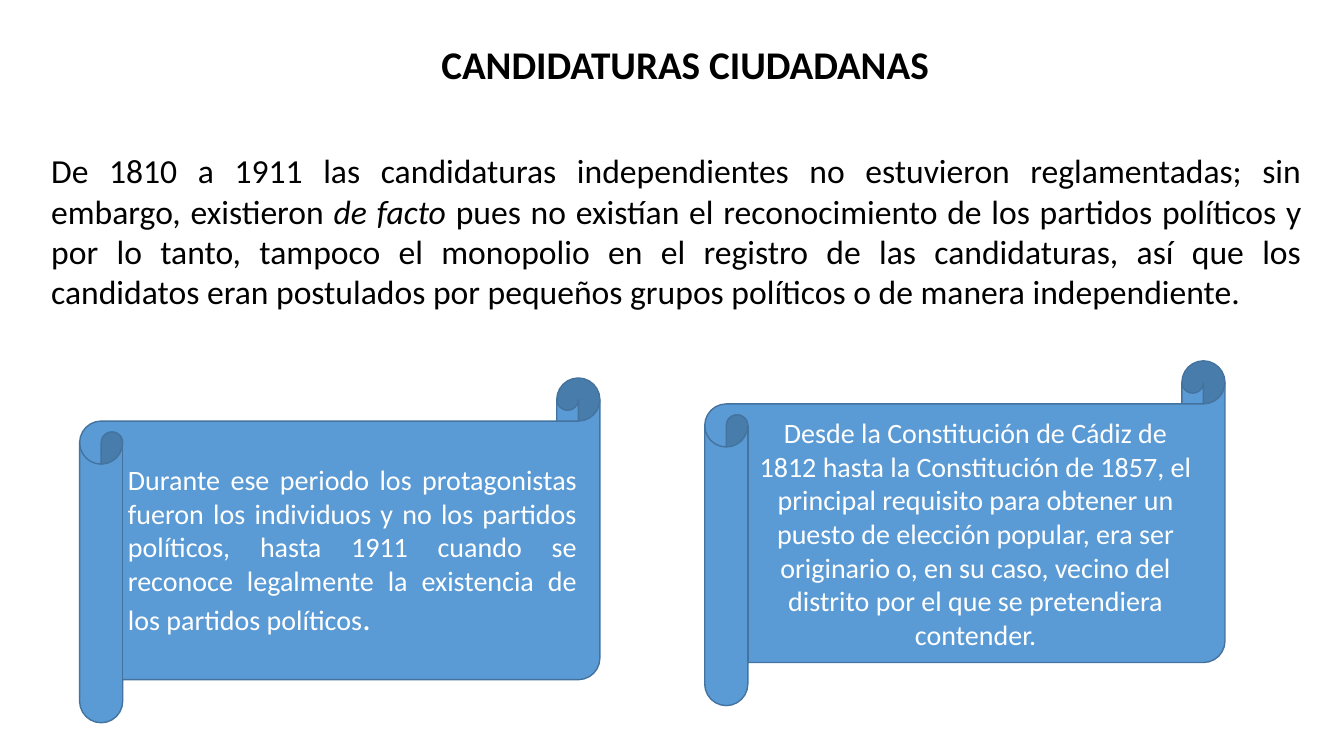
import dataclasses

import pptx
import pptx.dml.color
import pptx.enum.shapes
import pptx.enum.text
import pptx.util

PX = 9144  # 100 px to the inch
FONT = "Calibri"
BLACK = pptx.dml.color.RGBColor(0x00, 0x00, 0x00)
WHITE = pptx.dml.color.RGBColor(0xFF, 0xFF, 0xFF)
SCROLL_FILL = pptx.dml.color.RGBColor(0x5B, 0x9B, 0xD5)
SCROLL_LINE = pptx.dml.color.RGBColor(0x43, 0x73, 0x9E)
ALIGN = pptx.enum.text.PP_ALIGN
ANCHOR = pptx.enum.text.MSO_ANCHOR


@dataclasses.dataclass(frozen=True)
class Box:
    left: int
    top: int
    width: int
    height: int

    def emu(self) -> tuple[int, int, int, int]:
        return self.left * PX, self.top * PX, self.width * PX, self.height * PX


@dataclasses.dataclass(frozen=True)
class Span:
    text: str
    size: int
    bold: bool = False
    italic: bool = False


def write(shape, spans: list[Span], *, color: pptx.dml.color.RGBColor,
          align=ALIGN.CENTER, anchor=ANCHOR.TOP) -> None:
    frame = shape.text_frame
    frame.word_wrap = True
    frame.auto_size = pptx.enum.text.MSO_AUTO_SIZE.NONE
    frame.vertical_anchor = anchor
    para = frame.paragraphs[0]
    para.alignment = align
    for span in spans:
        run = para.add_run()
        run.text = span.text
        run.font.name = FONT
        run.font.size = pptx.util.Pt(span.size)
        run.font.bold = span.bold
        run.font.italic = span.italic
        run.font.color.rgb = color


def add_text(page, box: Box, spans: list[Span], *,
             color: pptx.dml.color.RGBColor) -> None:
    write(page.shapes.add_textbox(*box.emu()), spans, color=color, align=ALIGN.JUSTIFY)


def add_scroll(page, box: Box):
    scroll = page.shapes.add_shape(
        pptx.enum.shapes.MSO_SHAPE.HORIZONTAL_SCROLL, *box.emu())
    scroll.shadow.inherit = False
    scroll.fill.solid()
    scroll.fill.fore_color.rgb = SCROLL_FILL
    scroll.line.color.rgb = SCROLL_LINE
    scroll.line.width = pptx.util.Pt(1)
    return scroll


def main() -> None:
    deck = pptx.Presentation()
    deck.slide_width, deck.slide_height = 1333 * PX, 750 * PX
    page = deck.slides.add_slide(deck.slide_layouts[5])

    # Title
    title = page.shapes.title
    title.left, title.top, title.width, title.height = Box(144, 35, 1071, 57).emu()
    write(title, [Span("CANDIDATURAS CIUDADANAS", 28, bold=True)], color=BLACK)

    # Introduction
    add_text(page, Box(41, 144, 1260, 172), [
        Span("De 1810 a 1911 las candidaturas independientes no estuvieron "
             "reglamentadas; sin embargo, existieron ", 24),
        Span("de facto ", 24, italic=True),
        Span("pues no existían el reconocimiento de los partidos políticos y por lo "
             "tanto, tampoco el monopolio en el registro de las candidaturas, así que "
             "los candidatos eran postulados por pequeños grupos políticos o de manera "
             "independiente.", 24),
    ], color=BLACK)

    # Right scroll, with its own text
    requirement = add_scroll(page, Box(699, 358, 516, 342))
    write(requirement, [
        Span("Desde la Constitución de Cádiz de 1812 hasta la Constitución de 1857, el "
             "principal requisito para obtener un puesto de elección popular, era ser "
             "originario o, en su caso, vecino del distrito por el que se pretendiera "
             "contender.", 20),
    ], color=WHITE, anchor=ANCHOR.MIDDLE)

    # Left scroll, with a justified text box over it
    add_scroll(page, Box(79, 375, 516, 342))
    add_text(page, Box(117, 454, 465, 185), [
        Span("Durante ese periodo los protagonistas fueron los individuos y no los "
             "partidos políticos, hasta 1911 cuando se reconoce legalmente la "
             "existencia de los partidos políticos", 20),
        Span(".", 24),
    ], color=WHITE)

    deck.save("out.pptx")


if __name__ == "__main__":
    main()
